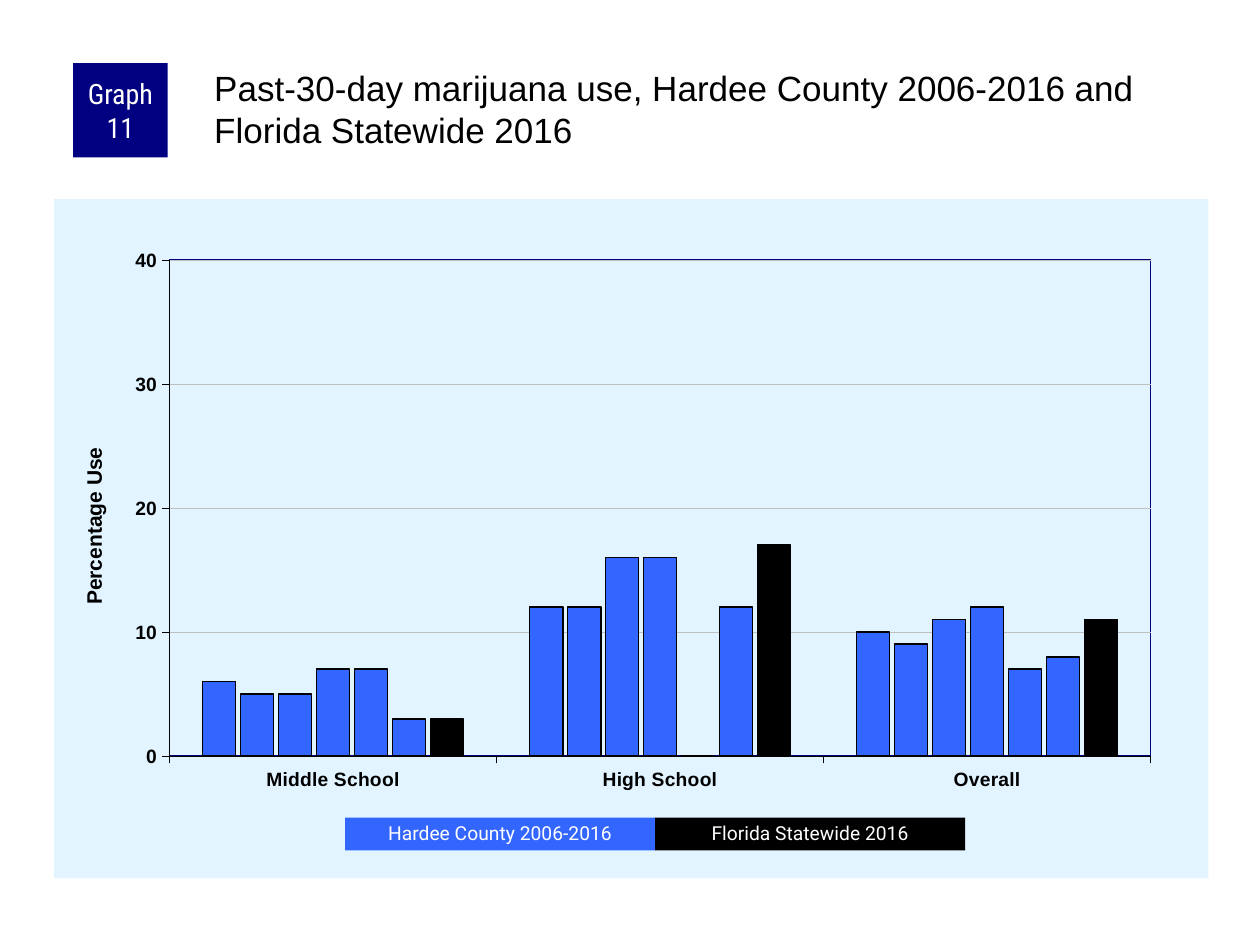
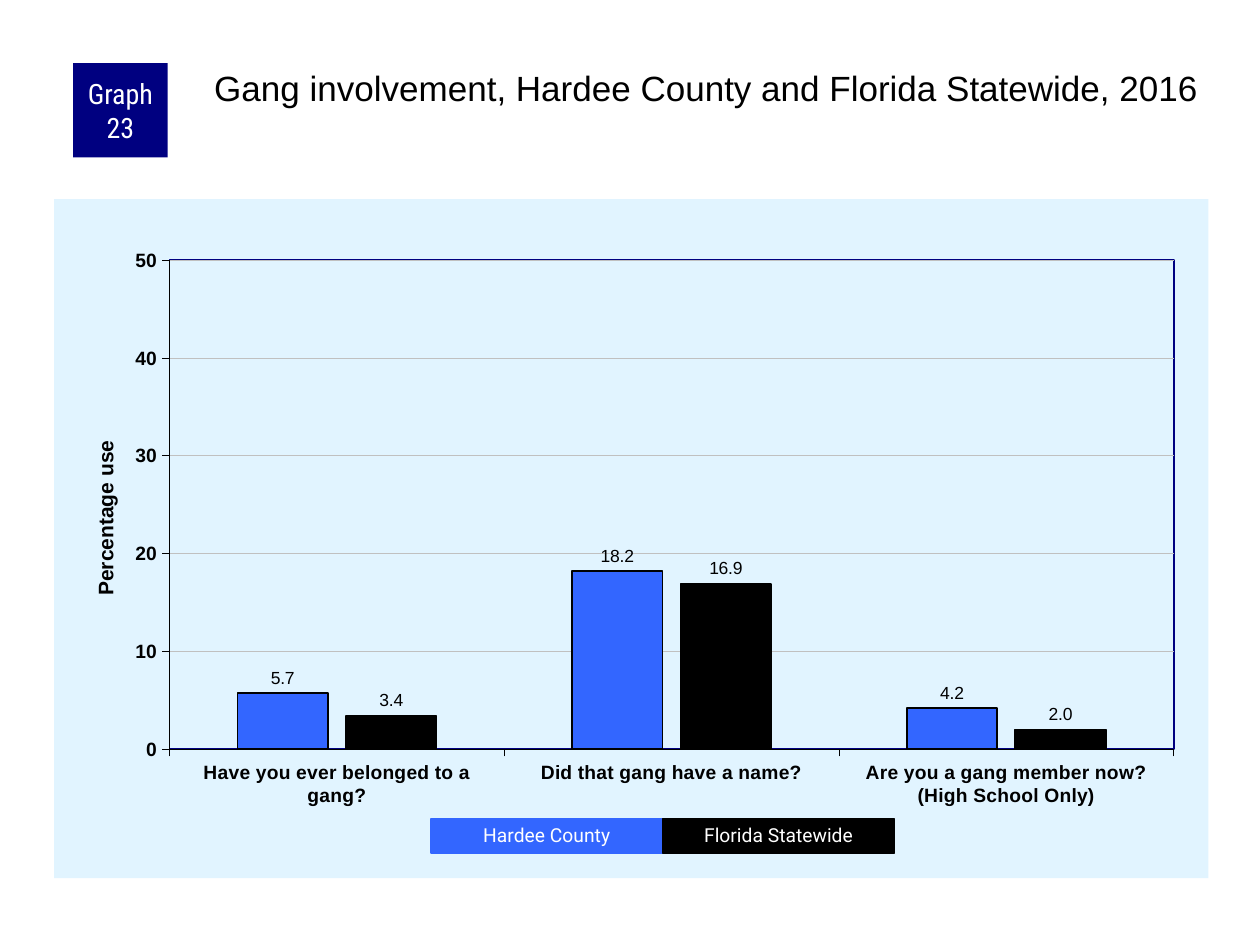
from dataclasses import dataclass

from lxml import etree
from pptx import Presentation
from pptx import util as u
from pptx.chart.axis import CategoryAxis, ValueAxis
from pptx.chart.chart import Chart
from pptx.chart.data import CategoryChartData
from pptx.dml.color import RGBColor
from pptx.enum import chart as charts
from pptx.enum import shapes, text
from pptx.oxml.ns import qn
from pptx.shapes.autoshape import Shape
from pptx.slide import Slide
from pptx.text.text import Font

EMU_PER_PX = 9144  # 100 px to the inch


@dataclass(frozen=True)
class Theme:
    navy: str = "000080"
    county: str = "3366FF"
    state: str = "000000"
    ink: str = "000000"
    paper: str = "FFFFFF"
    panel: str = "E1F4FF"
    grid: str = "C0C0C0"
    body_font: str = "Arial"
    badge_font: str = "Roboto Condensed"
    legend_font: str = "Roboto"
    title_size: int = 20
    badge_size: int = 16
    axis_title_size: int = 12
    axis_size: int = 11
    legend_size: int = 11
    label_size: int = 10
    hairline: float = 0.25
    bar_line: float = 1
    plot_line: float = 1


@dataclass(frozen=True)
class Box:
    left: int
    top: int
    width: int
    height: int

    def emu(self) -> tuple[int, ...]:
        return tuple(px(n) for n in (self.left, self.top, self.width, self.height))


@dataclass(frozen=True)
class Legend:
    """Two touching swatches; first_box is the left one."""
    first_box: Box
    county: str
    state: str
    line_width: float = 0


@dataclass(frozen=True)
class Graph:
    """The last row of values is the state, the rows before it the county."""
    number: int
    title: str
    axis_title: str
    axis_title_at: tuple[float, float]
    axis_max: int
    categories: tuple[str, ...]
    rows: tuple[tuple[float, ...], ...]
    gap: int
    overlap: int
    plot_area: tuple[float, float, float, float]
    legend: Legend
    labelled: bool = False


THEME = Theme()
BADGE = Box(58, 50, 75, 75)
TITLE = Box(167, 50, 792, 83)
CHART = Box(43, 158, 916, 539)

GRAPHS = (
    Graph(
        number=11,
        title="Past-30-day marijuana use, Hardee County 2006-2016 and Florida Statewide 2016",
        axis_title="Percentage Use",
        axis_title_at=(0.02, 0.36),
        axis_max=40,
        categories=("Middle School", "High School", "Overall"),
        rows=((6, 12, 10), (5, 12, 9), (5, 16, 11), (7, 16, 12),
              (7, 0, 7), (3, 12, 8), (3, 17, 11)),
        gap=200,
        overlap=-15,
        plot_area=(0.1, 0.09, 0.85, 0.73),
        legend=Legend(Box(274, 649, 246, 26),
                      "Hardee County 2006-2016", "Florida Statewide 2016"),
    ),
    Graph(
        number=23,
        title="Gang involvement, Hardee County and Florida Statewide, 2016",
        axis_title="Percentage use",
        axis_title_at=(0.03, 0.35),
        axis_max=50,
        categories=("Have you ever belonged to a gang?", "Did that gang have a name?",
                    "Are you a gang member now?\n(High School Only)"),
        rows=((5.7, 18.2, 4.2), (3.4, 16.9, 2.0)),
        gap=150,
        overlap=-20,
        plot_area=(0.1, 0.09, 0.87, 0.72),
        legend=Legend(Box(342, 650, 184, 27),
                      "Hardee County", "Florida Statewide", line_width=0.75),
        labelled=True,
    ),
)


def px(length: int) -> int:
    return u.Emu(length * EMU_PER_PX)


def rgb(colour: str) -> RGBColor:
    return RGBColor.from_string(colour)


def style_font(font: Font, name: str, size: float, colour: str, bold: bool = False) -> None:
    font.name = name
    font.size = u.Pt(size)
    font.bold = bold
    font.color.rgb = rgb(colour)


def add_block(page: Slide, box: Box, words: str, fill: str, font: str, size: int,
              line_width: float = 0) -> Shape:
    """Draw a filled rectangle with centred white text."""
    block = page.shapes.add_shape(shapes.MSO_SHAPE.RECTANGLE, *box.emu())
    block.shadow.inherit = False
    block.fill.solid()
    block.fill.fore_color.rgb = rgb(fill)
    if line_width:
        block.line.color.rgb = rgb(fill)
        block.line.width = u.Pt(line_width)
    else:
        block.line.fill.background()
    frame = block.text_frame
    frame.word_wrap = True
    frame.vertical_anchor = text.MSO_ANCHOR.MIDDLE
    frame.text = words
    para = frame.paragraphs[0]
    para.alignment = text.PP_ALIGN.CENTER
    style_font(para.runs[0].font, font, size, THEME.paper)
    return block


def add_badge(page: Slide, number: int) -> None:
    badge = add_block(page, BADGE, f"Graph {number}", THEME.navy,
                      THEME.badge_font, THEME.badge_size)
    frame = badge.text_frame
    frame.margin_left = frame.margin_right = px(5)
    frame.margin_top = frame.margin_bottom = 0


def add_title(page: Slide, words: str) -> None:
    frame = page.shapes.add_textbox(*TITLE.emu()).text_frame
    frame.word_wrap = True
    frame.margin_left = frame.margin_top = px(3)
    frame.margin_right = frame.margin_bottom = 0
    frame.text = words
    style_font(frame.paragraphs[0].runs[0].font, THEME.body_font, THEME.title_size, THEME.ink)


def add_legend(page: Slide, legend: Legend) -> None:
    first = legend.first_box
    entries = ((legend.county, THEME.county), (legend.state, THEME.state))
    for index, (words, colour) in enumerate(entries):
        box = Box(first.left + index * first.width, first.top, first.width, first.height)
        swatch = add_block(page, box, words, colour, THEME.legend_font,
                           THEME.legend_size, legend.line_width)
        swatch.text_frame.paragraphs[0].line_spacing = 0.9


def set_layout(parent: etree._Element, **settings: float | str) -> None:
    """Place a chart part by fractions of the chart's size."""
    layout = parent.find(qn("c:layout"))
    if layout is None:
        layout = etree.Element(qn("c:layout"))
        parent.insert(0, layout)
    manual = etree.SubElement(layout, qn("c:manualLayout"))
    for tag, value in settings.items():
        etree.SubElement(manual, qn(f"c:{tag}")).set("val", str(value))


def add_solid_fill(parent: etree._Element, colour: str) -> None:
    fill = etree.SubElement(parent, qn("a:solidFill"))
    etree.SubElement(fill, qn("a:srgbClr")).set("val", colour)


def style_areas(chart: Chart, plot_area: tuple[float, float, float, float]) -> None:
    """Fill the chart panel, and place and outline the plot area."""
    space = chart.element if hasattr(chart, "element") else chart._chartSpace
    body = space.find(qn("c:chart"))
    panel = etree.Element(qn("c:spPr"))
    add_solid_fill(panel, THEME.panel)
    etree.SubElement(etree.SubElement(panel, qn("a:ln")), qn("a:noFill"))
    body.addnext(panel)

    plot = body.find(qn("c:plotArea"))
    x, y, w, h = plot_area
    set_layout(plot, layoutTarget="inner", xMode="edge", yMode="edge", x=x, y=y, w=w, h=h)
    outline = etree.SubElement(plot, qn("c:spPr"))
    etree.SubElement(outline, qn("a:noFill"))
    line = etree.SubElement(outline, qn("a:ln"))
    line.set("w", str(u.Pt(THEME.plot_line)))
    add_solid_fill(line, THEME.navy)


def style_axis(axis: CategoryAxis | ValueAxis) -> None:
    axis.major_tick_mark = charts.XL_TICK_MARK.OUTSIDE
    axis.minor_tick_mark = charts.XL_TICK_MARK.NONE
    axis.format.line.color.rgb = rgb(THEME.ink)
    axis.format.line.width = u.Pt(THEME.hairline)
    style_font(axis.tick_labels.font, THEME.body_font, THEME.axis_size, THEME.ink, bold=True)


def style_value_axis(axis: ValueAxis, graph: Graph) -> None:
    axis.minimum_scale = 0
    axis.maximum_scale = graph.axis_max
    axis.major_unit = 10
    grid = axis.major_gridlines.format.line
    grid.color.rgb = rgb(THEME.grid)
    grid.width = u.Pt(THEME.hairline)
    axis.tick_labels.number_format = "0"
    axis.tick_labels.number_format_is_linked = False

    frame = axis.axis_title.text_frame
    frame.text = graph.axis_title
    style_font(frame.paragraphs[0].runs[0].font, THEME.body_font,
               THEME.axis_title_size, THEME.ink, bold=True)
    title = axis.axis_title._element
    turn = title.find(f".//{qn('a:bodyPr')}")
    turn.set("rot", "-5400000")
    turn.set("vert", "horz")
    x, y = graph.axis_title_at
    set_layout(title, xMode="edge", yMode="edge", x=x, y=y)


def add_column_chart(page: Slide, graph: Graph) -> None:
    data = CategoryChartData()
    data.categories = graph.categories
    for number, row in enumerate(graph.rows, start=1):
        data.add_series(f"Series {number}", row)
    chart = page.shapes.add_chart(
        charts.XL_CHART_TYPE.COLUMN_CLUSTERED, *CHART.emu(), data).chart
    chart.has_legend = False
    chart.has_title = False
    style_font(chart.font, THEME.body_font, THEME.axis_size, THEME.ink)
    style_areas(chart, graph.plot_area)
    for axis in (chart.category_axis, chart.value_axis):
        style_axis(axis)
    style_value_axis(chart.value_axis, graph)

    plot = chart.plots[0]
    plot.vary_by_categories = False
    plot.gap_width = graph.gap
    plot.overlap = graph.overlap
    *county, state = plot.series
    for series in (*county, state):
        series.invert_if_negative = False
        series.format.fill.solid()
        series.format.fill.fore_color.rgb = rgb(THEME.state if series is state else THEME.county)
        series.format.line.color.rgb = rgb(THEME.ink)
        series.format.line.width = u.Pt(THEME.bar_line)
        if graph.labelled:
            labels = series.data_labels
            labels.show_value = True
            labels.number_format = "0.0"
            labels.number_format_is_linked = False
            labels.position = charts.XL_LABEL_POSITION.OUTSIDE_END
            style_font(labels.font, THEME.body_font, THEME.label_size, THEME.ink)


def main() -> None:
    deck = Presentation()
    deck.slide_width, deck.slide_height = px(1000), px(750)
    blank = deck.slide_layouts[6]
    for graph in GRAPHS:
        page = deck.slides.add_slide(blank)
        add_column_chart(page, graph)
        add_badge(page, graph.number)
        add_title(page, graph.title)
        add_legend(page, graph.legend)
    deck.save("out.pptx")


if __name__ == "__main__":
    main()
